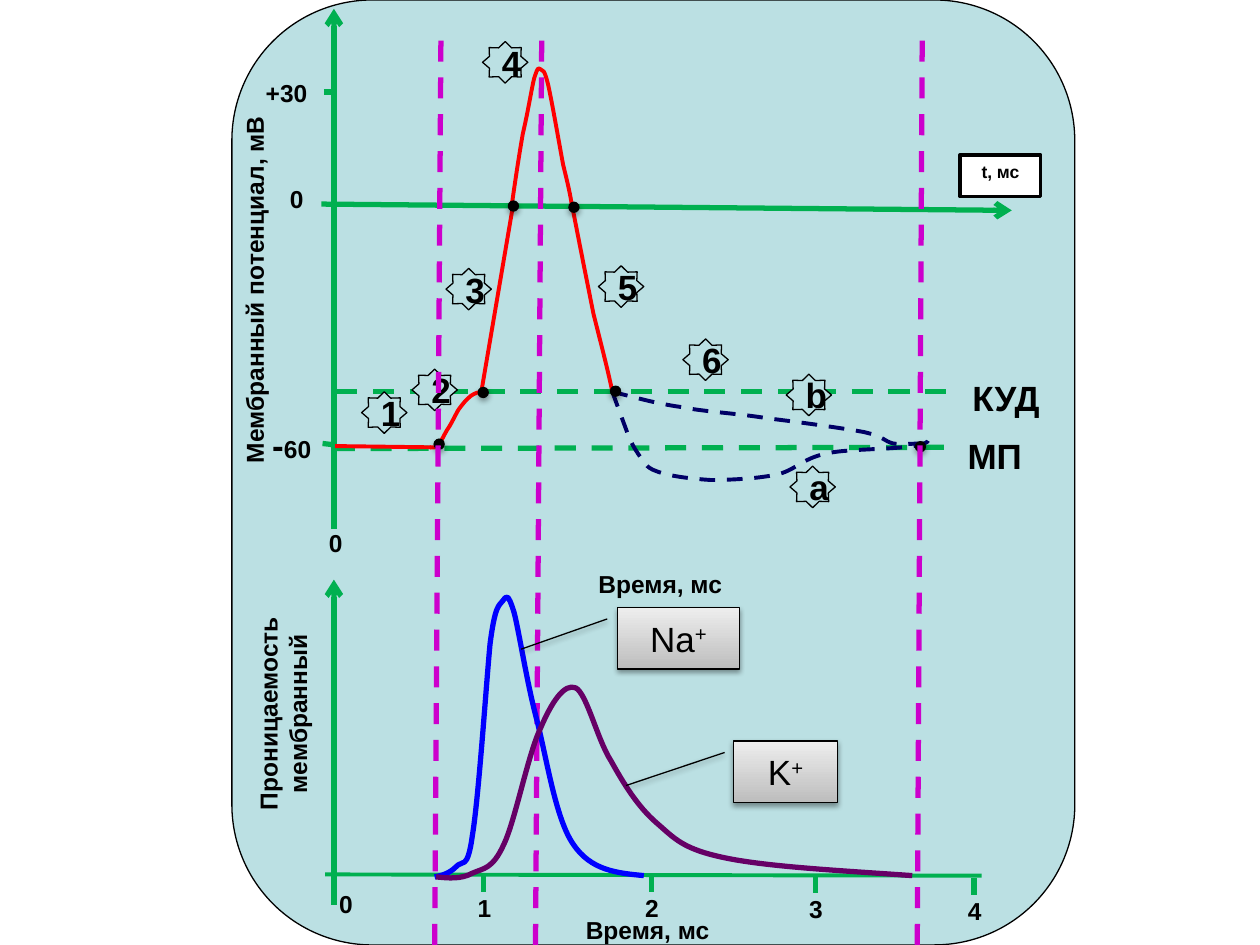
from lxml import etree
from pptx import Presentation
from pptx.dml.color import RGBColor
from pptx.enum.dml import MSO_LINE
from pptx.enum.shapes import MSO_CONNECTOR, MSO_SHAPE
from pptx.enum.text import MSO_ANCHOR, PP_ALIGN
from pptx.oxml.ns import qn
from pptx.util import Inches, Pt

DASH, STRAIGHT = MSO_LINE.DASH, MSO_CONNECTOR.STRAIGHT
C = {"panel": "BBE0E3", "axis": "00B050", "red": "FF0000", "navy": "000066",
     "marker": "CC00CC", "sodium": "0000FF", "potassium": "660066",
     "black": "000000", "white": "FFFFFF", "dark": "BDBDBD", "light": "EEEEEE"}

# start, end, width, arrowhead, dash
POTENTIAL_AXES = [
    ((2.55, 1.62), (8.03, 1.67), 3, True, None),
    ((2.65, 4.2), (2.65, 0.07), 3, True, None),
    ((2.57, 0.73), (2.65, 0.73), 3, False, None),
    ((2.56, 3.52), (2.65, 3.53), 3, False, None),
    ((2.65, 3.56), (7.55, 3.55), 3, False, DASH),
    ((2.67, 3.11), (7.58, 3.11), 3, False, DASH),
]
PERMEABILITY_AXES = [
    ((2.65, 7.18), (2.65, 4.6), 3, True, None),
    ((2.58, 6.94), (7.79, 6.95), 2.25, False, None),
]
TICKS = [("1", 3.84, 6.95), ("2", 5.17, 6.95), ("3", 6.47, 6.96), ("4", 7.73, 6.97)]
MARKERS = [(4.25, 4.3, 0.21), (3.45, 3.5, 0.22), (7.28, 7.32, 0.22)]  # bottom x, top x, top y

# left, top, width, height, runs of (text, size)
LABELS = [
    (2.08, 1.41, 0.55, 0.33, [("0", 14)]),
    (1.96, 0.57, 0.63, 0.34, [("+30", 14)]),
    (2.04, 3.31, 0.55, 0.44, [("-", 20), ("60", 14)]),
    (2.39, 4.14, 0.55, 0.33, [("0", 14)]),
    (2.47, 7.01, 0.55, 0.33, [("0", 14)]),
    (4.57, 4.47, 1.34, 0.33, [("Время, мс", 14)]),
    (4.47, 7.21, 1.34, 0.33, [("Время, мс", 14)]),
    (7.48, 3.4, 0.83, 0.33, [("МП", 20)]),
    (7.57, 2.94, 0.83, 0.33, [("КУД", 20)]),
]
AXIS_TITLES = [
    (1.85, 0.58, 0.44, 3.44, ["Мембранный потенциал, мВ"]),
    (1.96, 4.53, 0.67, 2.27, ["Проницаемость", "мембранный"]),
]
PHASES = [("1", 2.87, 3.11), ("2", 3.27, 2.93), ("3", 3.54, 2.13), ("4", 3.83, 0.33),
          ("5", 4.75, 2.11), ("6", 5.42, 2.69), ("a", 6.27, 3.7), ("b", 6.24, 2.97)]
DOTS = [(3.44, 3.48), (3.79, 3.07), (4.03, 1.59), (4.51, 1.6), (4.84, 3.06), (7.26, 3.5)]

# Two points make a straight line; otherwise a start, then three Bezier points per piece
ACTION_POTENTIAL = [
    [(2.66, 3.54), (3.42, 3.55)],
    [(3.41, 3.55), (3.43, 3.55), (3.46, 3.56), (3.48, 3.53), (3.5, 3.51), (3.52, 3.46),
     (3.55, 3.41), (3.58, 3.37), (3.61, 3.3), (3.64, 3.25), (3.67, 3.21), (3.7, 3.17),
     (3.74, 3.14), (3.77, 3.12), (3.8, 3.11), (3.83, 3.11)],
    [(3.82, 3.11), (4.07, 1.64)],
    [(4.06, 1.64), (4.09, 1.43), (4.12, 1.23), (4.15, 1.06), (4.19, 0.89), (4.22, 0.7),
     (4.24, 0.62), (4.27, 0.53), (4.27, 0.54), (4.29, 0.55), (4.31, 0.56), (4.32, 0.55),
     (4.35, 0.67), (4.38, 0.8), (4.44, 1.15), (4.47, 1.31), (4.51, 1.47), (4.53, 1.56),
     (4.54, 1.64)],
    [(4.54, 1.63), (4.6, 1.94), (4.66, 2.24), (4.71, 2.49), (4.77, 2.73), (4.82, 2.92),
     (4.86, 3.11)],
]
AFTER_POTENTIALS = [
    [(4.86, 3.11), (4.9, 3.22), (4.94, 3.33), (4.97, 3.41), (5, 3.5), (5.03, 3.55),
     (5.07, 3.61), (5.11, 3.66), (5.12, 3.71), (5.21, 3.74), (5.31, 3.78), (5.48, 3.8),
     (5.64, 3.81), (5.79, 3.81), (6, 3.8), (6.15, 3.77), (6.31, 3.74), (6.36, 3.64),
     (6.56, 3.6), (6.76, 3.55), (7.36, 3.58), (7.37, 3.49)],
    [(4.86, 3.11), (5.03, 3.15), (5.19, 3.2), (5.4, 3.23), (5.6, 3.27), (5.85, 3.28),
     (6.09, 3.32), (6.34, 3.35), (6.7, 3.4), (6.86, 3.43), (7.03, 3.47), (7.01, 3.5),
     (7.09, 3.52), (7.16, 3.53), (7.24, 3.52), (7.33, 3.52)],
]
SODIUM = [
    (3.45, 6.96), (3.51, 6.95), (3.57, 6.93), (3.62, 6.88), (3.67, 6.82), (3.71, 6.92),
    (3.75, 6.63), (3.8, 6.33), (3.86, 5.42), (3.89, 5.11), (3.93, 4.8), (3.96, 4.81),
    (3.99, 4.77), (4.02, 4.73), (4.03, 4.7), (4.08, 4.86), (4.12, 5.01), (4.18, 5.41),
    (4.26, 5.71), (4.34, 6.02), (4.41, 6.5), (4.55, 6.7), (4.69, 6.91), (4.9, 6.93),
    (5.11, 6.95)]
POTASSIUM = [
    (3.46, 6.96), (3.56, 6.97), (3.66, 6.98), (3.75, 6.93), (3.84, 6.89), (3.91, 6.9),
    (4, 6.7), (4.09, 6.51), (4.19, 5.99), (4.29, 5.78), (4.38, 5.57), (4.48, 5.42),
    (4.57, 5.46), (4.66, 5.51), (4.74, 5.87), (4.85, 6.04), (4.95, 6.22), (5.06, 6.4),
    (5.21, 6.53), (5.36, 6.66), (5.42, 6.74), (5.76, 6.81), (6.1, 6.88), (6.67, 6.91),
    (7.24, 6.95)]
IONS = [("Na", 4.9, 4.82, 0.97, (0.188, -0.083, 0.678, -0.788)),
        ("K", 5.82, 5.88, 0.83, (0.188, -0.083, 0.723, -1.026))]

prs = Presentation()
prs.slide_width, prs.slide_height = Inches(10), Inches(7.5)
s = prs.slides.add_slide(prs.slide_layouts[6])


def rgb(name):
    return RGBColor.from_string(C[name])


def style_line(line, color, width, dash=None):
    line.color.rgb = rgb(color)
    line.width = Pt(width)
    if dash:
        line.dash_style = dash


def write(sp, lines, bold=True):
    """Fill the shape with one paragraph per list of (text, size) runs."""
    tf = sp.text_frame
    for i, runs in enumerate(lines):
        p = tf.add_paragraph() if i else tf.paragraphs[0]
        p.alignment = PP_ALIGN.CENTER
        for text, size in runs:
            r = p.add_run()
            r.text = text
            r.font.name, r.font.size, r.font.bold = "Arial", Pt(size), bold
            r.font.color.rgb = rgb("black")


def add_box(kind, x, y, w, h, fill, line_width=0.75):
    sp = s.shapes.add_shape(kind, *map(Inches, (x, y, w, h)))
    sp.shadow.inherit = False
    if fill:
        sp.fill.solid()
        sp.fill.fore_color.rgb = rgb(fill)
    if line_width:
        style_line(sp.line, "black", line_width)
    else:
        sp.line.fill.background()
    return sp


def add_label(x, y, w, h, lines):
    sp = s.shapes.add_textbox(*map(Inches, (x, y, w, h)))
    sp.text_frame.word_wrap = True
    write(sp, lines)
    return sp


def add_line(start, end, color, width, arrow=False, dash=None):
    cn = s.shapes.add_connector(STRAIGHT, *map(Inches, start + end))
    style_line(cn.line, color, width, dash)
    if arrow:
        etree.SubElement(cn.line._get_or_add_ln(), qn("a:tailEnd"), type="arrow")
    etree.SubElement(cn._element.spPr, qn("a:effectLst"))


def add_curve(points, color, width, dash=None):
    emu = [(Inches(x), Inches(y)) for x, y in points]
    builder = s.shapes.build_freeform(*emu[0])
    builder.add_line_segments(emu[1:], close=False)
    sp = builder.convert_to_shape()
    sp.shadow.inherit = False
    sp.fill.background()
    style_line(sp.line, color, width, dash)
    if len(points) > 2:  # merge every three line steps into one cubic piece
        outline = next(sp._element.iter(qn("a:path")))
        steps = outline.findall(qn("a:lnTo"))
        for i in range(0, len(steps), 3):
            cubic = etree.SubElement(outline, qn("a:cubicBezTo"))
            for step in steps[i:i + 3]:
                cubic.append(step[0])
                outline.remove(step)


def add_shadow(sp, alpha, distance):
    effects = sp._element.spPr.find(qn("a:effectLst"))
    shadow = etree.SubElement(effects, qn("a:outerShdw"), blurRad=str(Pt(3.1)),
                              dist=str(Pt(distance)), dir="5400000", rotWithShape="0")
    color = etree.SubElement(shadow, qn("a:srgbClr"), val=C["black"])
    etree.SubElement(color, qn("a:alpha"), val=str(alpha * 1000))


add_box(MSO_SHAPE.ROUNDED_RECTANGLE, 1.84, 0, 6.69, 7.5, "panel")
for start, end, width, arrow, dash in POTENTIAL_AXES + PERMEABILITY_AXES:
    add_line(start, end, "axis", width, arrow, dash)
for text, x, y in TICKS:
    add_line((x, y), (x, y + 0.13), "axis", 3)
    add_label(x - 0.27, y + 0.09, 0.55, 0.33, [[(text, 14)]])
for *place, runs in LABELS:
    add_label(*place, [runs])
for *place, titles in AXIS_TITLES:
    sp = add_label(*place, [[(title, 14)] for title in titles])
    sp.text_frame._txBody.bodyPr.set("vert", "vert270")

for curve in ACTION_POTENTIAL:
    add_curve(curve, "red", 2.25)
for curve in AFTER_POTENTIALS:
    add_curve(curve, "navy", 2.25, DASH)
for text, x, y in PHASES:
    write(add_box(MSO_SHAPE.STAR_8_POINT, x, y, 0.36, 0.33, "panel"), [[(text, 20)]])
for x, y in DOTS:
    add_shadow(add_box(MSO_SHAPE.OVAL, x, y, 0.09, 0.09, "black", 0), 35, 1.8)
for bottom_x, top_x, top_y in MARKERS:
    add_line((bottom_x, 7.5), (top_x, top_y), "marker", 3, dash=DASH)
add_curve(SODIUM, "sodium", 3)
add_curve(POTASSIUM, "potassium", 3)

for ion, x, y, w, pointer in IONS:
    sp = add_box(MSO_SHAPE.LINE_CALLOUT_1, x, y, w, 0.49, None)
    for i, value in enumerate(pointer):
        sp.adjustments[i] = value
    sp.fill.gradient()
    sp.fill.gradient_angle = 90
    for stop, color in zip(sp.fill.gradient_stops, ("dark", "light")):
        stop.color.rgb = rgb(color)
    add_shadow(sp, 38, 1.6)
    write(sp, [[(ion, 20), ("+", 20)]], bold=False)
    sp.text_frame.paragraphs[0].runs[1].font._element.set("baseline", "30000")

sp = add_box(MSO_SHAPE.RECTANGLE, 7.62, 1.23, 0.64, 0.33, "white", 2)
sp.text_frame.vertical_anchor = MSO_ANCHOR.TOP
write(sp, [[("t, мс", 10)]])

prs.save("out.pptx")
